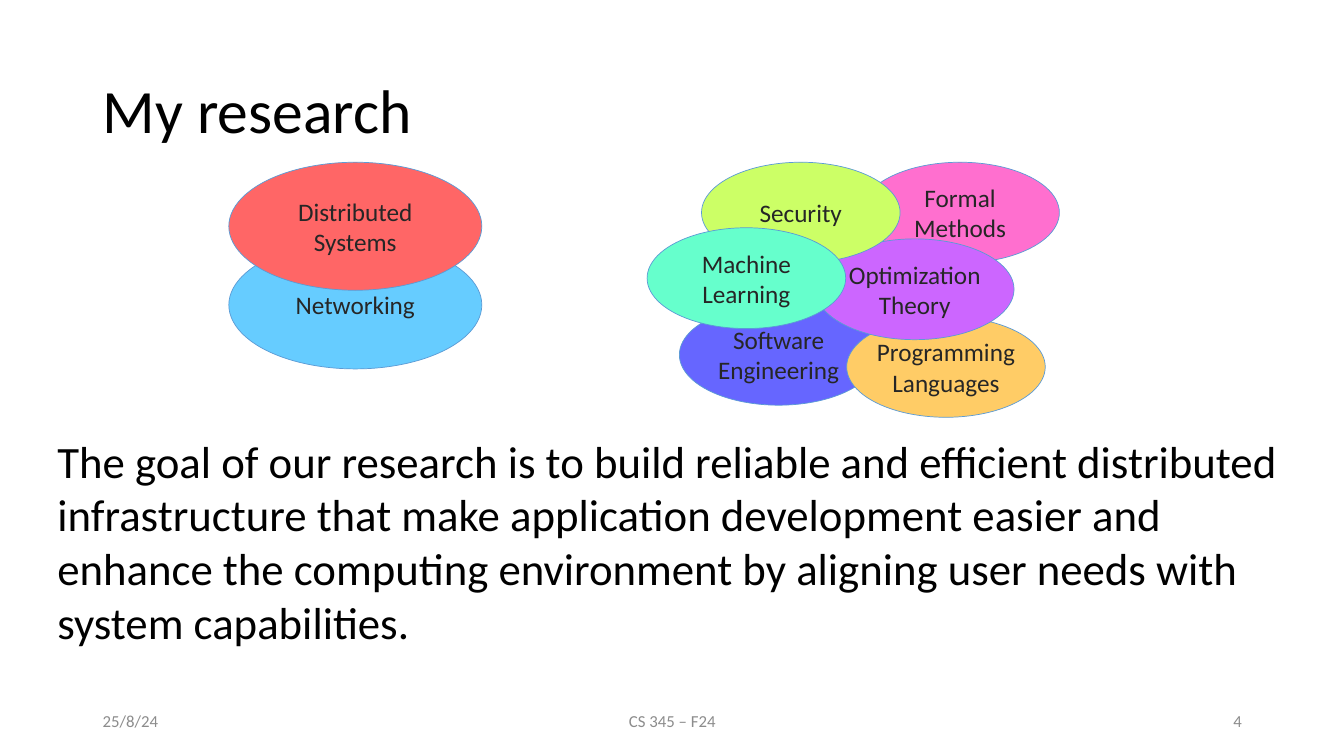
from dataclasses import dataclass

from pptx import Presentation
from pptx.dml.color import RGBColor
from pptx.enum import shapes, text
from pptx.util import Pt

FONT = "Calibri"
LEFT, CENTER, RIGHT = text.PP_ALIGN.LEFT, text.PP_ALIGN.CENTER, text.PP_ALIGN.RIGHT
TOP, MIDDLE = text.MSO_ANCHOR.TOP, text.MSO_ANCHOR.MIDDLE
TOP_ROW = 115.92
GOAL = (
    "The goal of our research is to build reliable and efficient distributed "
    "infrastructure that make application development easier and enhance the "
    "computing environment by aligning user needs with system capabilities."
)


@dataclass
class Topic:
    name: str
    fill: str
    left: float
    top: float
    width: float = 141.84
    height: float = 72


@dataclass
class Label:
    words: str
    left: float
    top: float
    width: float
    height: float
    size: float = 12
    color: str = "8C8C8C"
    align: text.PP_ALIGN = LEFT
    anchor: text.MSO_ANCHOR = MIDDLE


# Back to front
TOPICS = [
    Topic("Software Engineering", "6666FF", 485.28, 217.44),
    Topic("Networking", "66CCFF", 163.44, 172.08, 180.72, 91.44),
    Topic("Formal Methods", "FF6FCF", 614.88, TOP_ROW),
    Topic("Programming Languages", "FFCC66", 604.8, 226.08),
    Topic("Optimization Theory", "CC66FF", 582.48, 170.64),
    Topic("Security", "CCFF66", 501.12, TOP_ROW),
    Topic("Machine Learning", "66FFCC", 462.24, 162.72),
    Topic("Distributed Systems", "FF6666", 163.44, TOP_ROW, 180.72, 91.44),
]

LABELS = [
    Label(GOAL, 33.84, 306, 892.08, 162.72, size=32, color="000000", anchor=TOP),
    Label("25/8/24", 66.24, 500.4, 216, 28.8),
    Label("CS 345 – F24", 318.24, 500.4, 324, 28.8, align=CENTER),
    Label("4", 678.24, 500.4, 216, 28.8, align=RIGHT),
]


def rgb(code: str) -> RGBColor:
    return RGBColor.from_string(code)


def write(shape, words: str, *, size: float, color: str, align=LEFT,
          anchor=MIDDLE, side_inset: float = 7.2, spacing: float = 1.0) -> None:
    frame = shape.text_frame
    frame.word_wrap = True
    frame.auto_size = text.MSO_AUTO_SIZE.NONE
    frame.vertical_anchor = anchor
    frame.margin_left = frame.margin_right = Pt(side_inset)
    frame.margin_top = frame.margin_bottom = Pt(3.6)
    para = frame.paragraphs[0]
    para.alignment = align
    para.line_spacing = spacing
    span = para.add_run()
    span.text = words
    span.font.name = FONT
    span.font.size = Pt(size)
    span.font.color.rgb = rgb(color)


def place_title(page, words: str) -> None:
    title = page.shapes.title
    title.left, title.top = Pt(66.24), Pt(28.8)
    title.width, title.height = Pt(828), Pt(104.4)
    write(title, words, size=44, color="000000", spacing=0.9)


def draw_topic(page, topic: Topic) -> None:
    oval = page.shapes.add_shape(
        shapes.MSO_SHAPE.OVAL,
        Pt(topic.left), Pt(topic.top), Pt(topic.width), Pt(topic.height))
    oval.shadow.inherit = False
    oval.fill.solid()
    oval.fill.fore_color.rgb = rgb(topic.fill)
    oval.line.color.rgb = rgb("5B9BD5")
    oval.line.width = Pt(0.5)
    write(oval, topic.name, size=18, color="262626", align=CENTER, side_inset=0)


def draw_label(page, label: Label) -> None:
    box = page.shapes.add_textbox(
        Pt(label.left), Pt(label.top), Pt(label.width), Pt(label.height))
    write(box, label.words, size=label.size, color=label.color,
          align=label.align, anchor=label.anchor)


def main() -> None:
    deck = Presentation()
    deck.slide_width, deck.slide_height = Pt(960), Pt(540)
    page = deck.slides.add_slide(deck.slide_layouts.get_by_name("Title Only"))
    place_title(page, "My research")
    for topic in TOPICS:
        draw_topic(page, topic)
    for label in LABELS:
        draw_label(page, label)
    deck.save("out.pptx")


if __name__ == "__main__":
    main()
